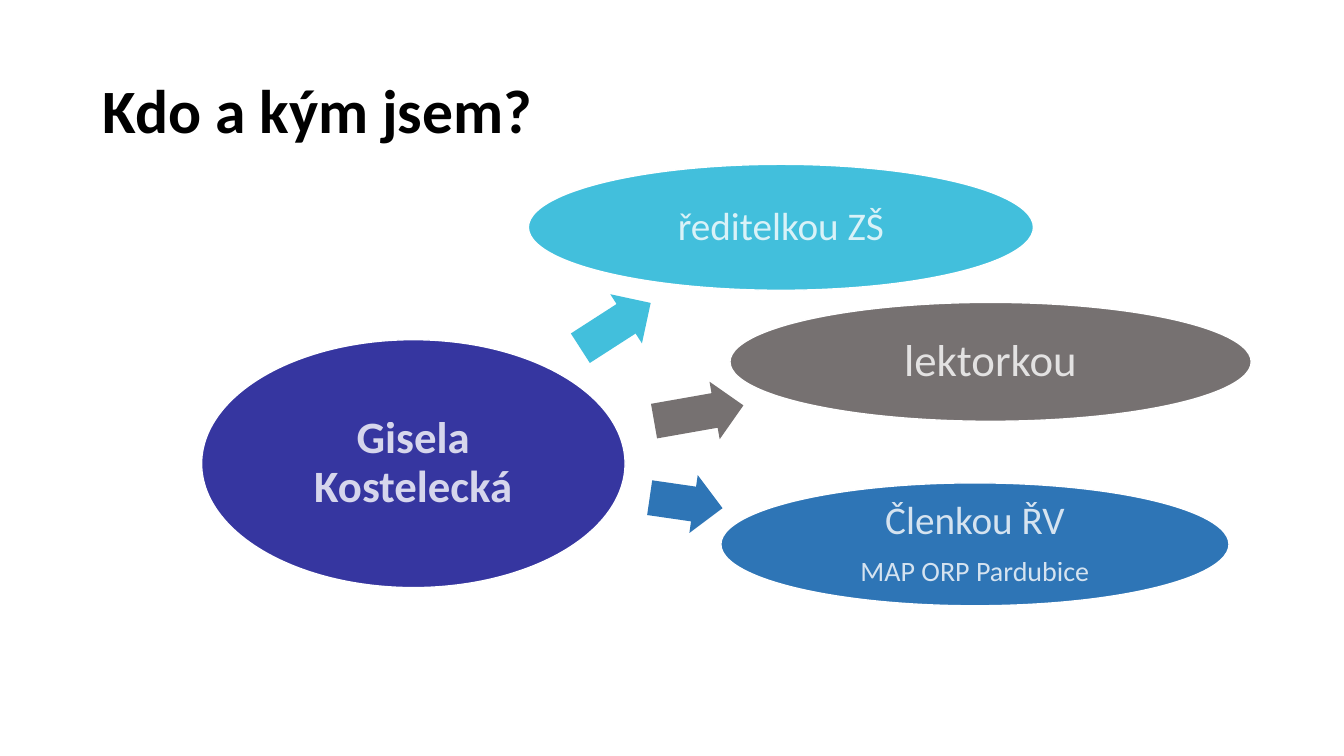
import pptx
import pptx.util
import pptx.dml.color
import pptx.enum.shapes
import pptx.enum.text
import pptx.oxml.ns
import lxml.etree

Inches = pptx.util.Inches
Pt = pptx.util.Pt
RGBColor = pptx.dml.color.RGBColor
Shape = pptx.enum.shapes.MSO_SHAPE
Anchor = pptx.enum.text.MSO_ANCHOR
Align = pptx.enum.text.PP_ALIGN

WHITE = RGBColor(0xFF, 0xFF, 0xFF)
BLACK = RGBColor(0, 0, 0)
INDIGO = RGBColor(0x36, 0x36, 0xA0)
CYAN = RGBColor(0x42, 0xBF, 0xDC)
GRAY = RGBColor(0x76, 0x71, 0x71)
BLUE = RGBColor(0x2E, 0x75, 0xB6)
FONT = "Calibri"

# Each role: colour, oval box, lines with sizes, arrow box, arrow turn
ROLES = [
    (CYAN, (5.24, 1.63, 5.01, 1.25), [("ředitelkou ZŠ", 28)],
     (5.69, 2.94, 0.83, 0.58), 327.2),
    (GRAY, (7.24, 3, 5.17, 1.18), [("lektorkou", 32)],
     (6.48, 3.81, 0.9, 0.58), 350),
    (BLUE, (7.15, 4.79, 5.04, 1.22),
     [("Členkou ŘV", 28), ("MAP ORP Pardubice", 20)],
     (6.44, 4.7, 0.73, 0.58), 8.2),
]


def style(par, size, color, bold=False):
    par.line_spacing = 0.9
    font = par.runs[0].font
    font.name = FONT
    font.size = Pt(size)
    font.bold = bold
    font.color.rgb = color
    return font


def fade(font, share):
    """Make solid text colour partly transparent."""
    clr = font.fill._xPr.find(".//" + pptx.oxml.ns.qn("a:srgbClr"))
    alpha = lxml.etree.SubElement(clr, pptx.oxml.ns.qn("a:alpha"))
    alpha.set("val", str(share * 1000))


def add_shape(slide, kind, box, color):
    shape = slide.shapes.add_shape(kind, *map(Inches, box))
    shape.shadow.inherit = False
    shape.fill.solid()
    shape.fill.fore_color.rgb = color
    return shape


def add_title(slide, box, text):
    frame = slide.shapes.add_textbox(*map(Inches, box)).text_frame
    frame.word_wrap = True
    frame.vertical_anchor = Anchor.MIDDLE
    frame.text = text
    style(frame.paragraphs[0], 44, BLACK, True)


def add_oval(slide, box, color, lines, bold=False):
    oval = add_shape(slide, Shape.OVAL, box, color)
    oval.line.color.rgb = WHITE
    oval.line.width = Pt(1)
    frame = oval.text_frame
    frame.word_wrap = True
    frame.vertical_anchor = Anchor.MIDDLE
    frame.margin_left = frame.margin_right = Inches(0.04)
    frame.margin_top = frame.margin_bottom = Inches(0.04)
    frame.text = "\n".join(text for text, size in lines)
    for par, (text, size) in zip(frame.paragraphs, lines):
        par.alignment = Align.CENTER
        par.space_after = Pt(round(size * 0.35))
        fade(style(par, size, WHITE, bold), 80)


def add_arrow(slide, box, color, turn):
    arrow = add_shape(slide, Shape.RIGHT_ARROW, box, color)
    arrow.adjustments[0] = 0.6
    arrow.adjustments[1] = 0.5
    arrow.rotation = turn
    arrow.line.fill.background()


def main():
    deck = pptx.Presentation()
    deck.slide_width = Inches(13.33)
    deck.slide_height = Inches(7.5)
    slide = deck.slides.add_slide(deck.slide_layouts[6])

    add_title(slide, (0.92, 0.4, 11.5, 1.45), "Kdo a kým jsem?")

    # Person in the hub, roles around it
    add_oval(slide, (2, 3.37, 4.2, 2.46), INDIGO, [("Gisela Kostelecká", 32)], True)
    for color, oval, lines, arrow, turn in ROLES:
        add_arrow(slide, arrow, color, turn)
        add_oval(slide, oval, color, lines)

    deck.save("out.pptx")


if __name__ == "__main__":
    main()
